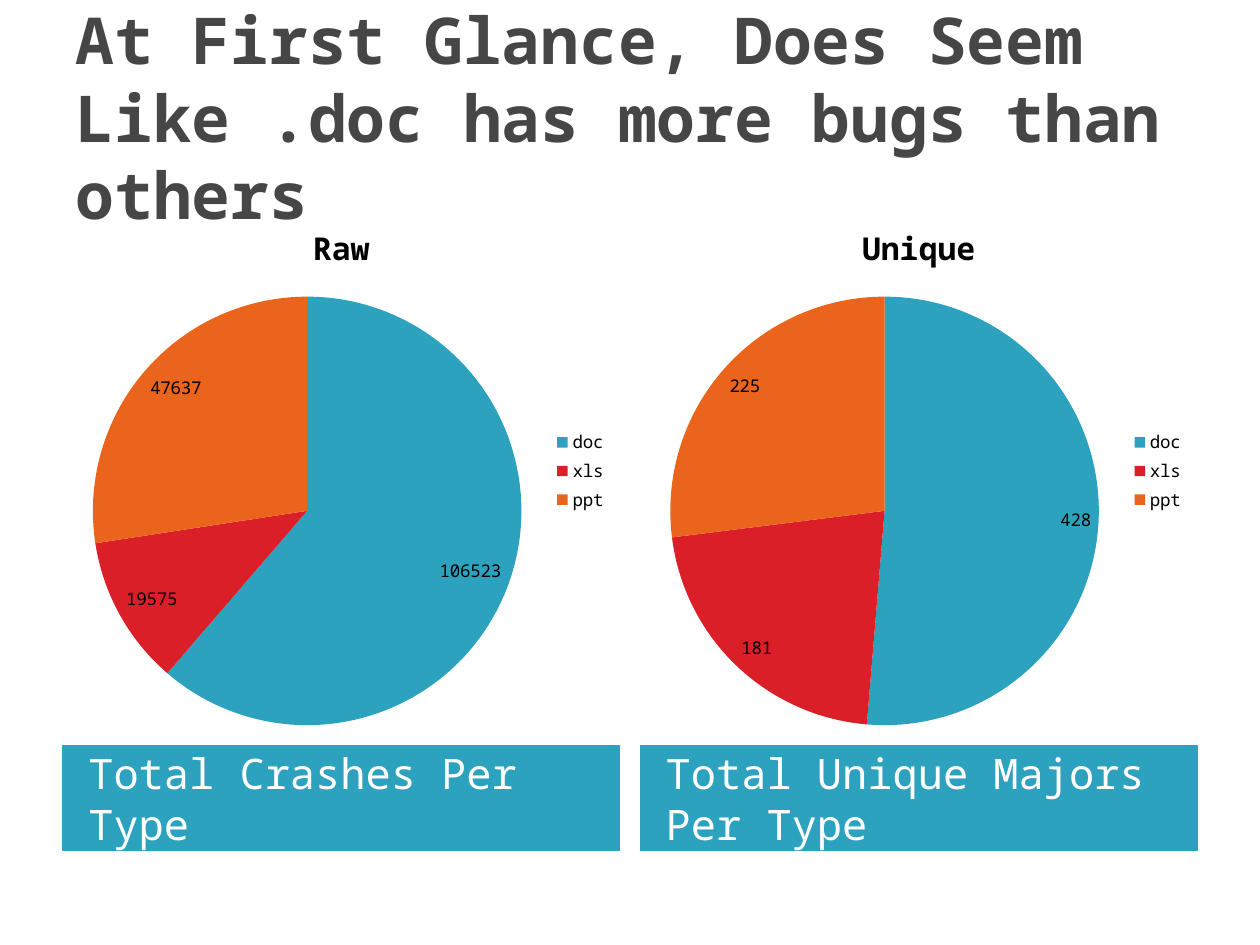
from pptx import Presentation
from pptx.chart.data import CategoryChartData
from pptx.dml.color import RGBColor
from pptx.enum.chart import XL_CHART_TYPE as ChartType
from pptx.enum.chart import XL_LABEL_POSITION as LabelPosition
from pptx.enum.chart import XL_LEGEND_POSITION as LegendPosition
from pptx.enum.text import MSO_ANCHOR as Anchor
from pptx.enum.text import MSO_AUTO_SIZE as AutoSize
from pptx.enum.text import PP_ALIGN as Align
from pptx.util import Cm, Pt

FONT = "Noto Sans Mono"
COLORS = {
    "title": "464646",
    "text": "000000",
    "caption": "FFFFFF",
    "doc": "2DA2BF",
    "xls": "DA1F28",
    "ppt": "EB641B",
}
FILE_TYPES = ["doc", "xls", "ppt"]
PANELS = [
    ("Raw", [106523, 19575, 47637], "Total Crashes Per Type"),
    ("Unique", [428, 181, 225], "Total Unique Majors Per Type"),
]
LEFT, PANEL_WIDTH, PANEL_STEP = 1.27, 11.22, 11.64


def color(name):
    return RGBColor.from_string(COLORS[name])


def style_font(font, size, color_name, bold=False):
    font.name = FONT
    font.size = Pt(size)
    font.bold = bold
    font.color.rgb = color(color_name)


def place(shape, left, top, width, height):
    shape.left, shape.top = Cm(left), Cm(top)
    shape.width, shape.height = Cm(width), Cm(height)


def write_text(box, text, size, color_name, bold=False):
    frame = box.text_frame
    frame.word_wrap = True
    frame.auto_size = AutoSize.NONE
    frame.vertical_anchor = Anchor.MIDDLE
    para = frame.paragraphs[0]
    para.alignment = Align.LEFT
    para.space_before = Pt(0)
    span = para.add_run()
    span.text = text
    style_font(span.font, size, color_name, bold)


def fill_title(box, text):
    place(box, LEFT, 0.76, 22.86, 3.18)
    write_text(box, text, 36.9, "title", bold=True)


def fill_caption(box, text, left):
    place(box, left, 15.03, PANEL_WIDTH, 2.12)
    box.fill.solid()
    box.fill.fore_color.rgb = color("doc")
    box.line.color.rgb = color("doc")
    box.line.width = Pt(0.75)
    box.text_frame.margin_left = Cm(0.51)
    write_text(box, text, 24, "caption")


def add_pie(page, name, values, left):
    data = CategoryChartData()
    data.categories = FILE_TYPES
    data.add_series(name, values)
    chart = page.shapes.add_chart(
        ChartType.PIE, Cm(left), Cm(4.02), Cm(PANEL_WIDTH), Cm(10.95), data
    ).chart
    style_font(chart.font, 10, "text")

    chart.has_title = True
    span = chart.chart_title.text_frame.paragraphs[0].add_run()
    span.text = name
    style_font(span.font, 18, "text", bold=True)
    chart.chart_title.include_in_layout = False

    chart.has_legend = True
    chart.legend.position = LegendPosition.RIGHT
    chart.legend.include_in_layout = False

    plot = chart.plots[0]
    plot.vary_by_categories = True
    plot.has_data_labels = True
    labels = plot.data_labels
    labels.show_value = True
    labels.show_percentage = False
    labels.position = LabelPosition.INSIDE_END
    style_font(labels.font, 10, "text")
    for index, file_type in enumerate(FILE_TYPES):
        fill = plot.series[0].points[index].format.fill
        fill.solid()
        fill.fore_color.rgb = color(file_type)


def main():
    deck = Presentation()
    deck.slide_width, deck.slide_height = Cm(25.4), Cm(19.05)
    page = deck.slides.add_slide(deck.slide_layouts.get_by_name("Comparison"))
    title, first_caption, first_content, second_caption, second_content = page.placeholders
    for content in (first_content, second_content):
        content.element.getparent().remove(content.element)

    fill_title(title, "At First Glance, Does Seem Like .doc has more bugs than others")
    captions = (first_caption, second_caption)
    for index, (caption, (name, values, text)) in enumerate(zip(captions, PANELS)):
        left = LEFT + index * PANEL_STEP
        fill_caption(caption, text, left)
        add_pie(page, name, values, left)
    deck.save("out.pptx")


if __name__ == "__main__":
    main()
